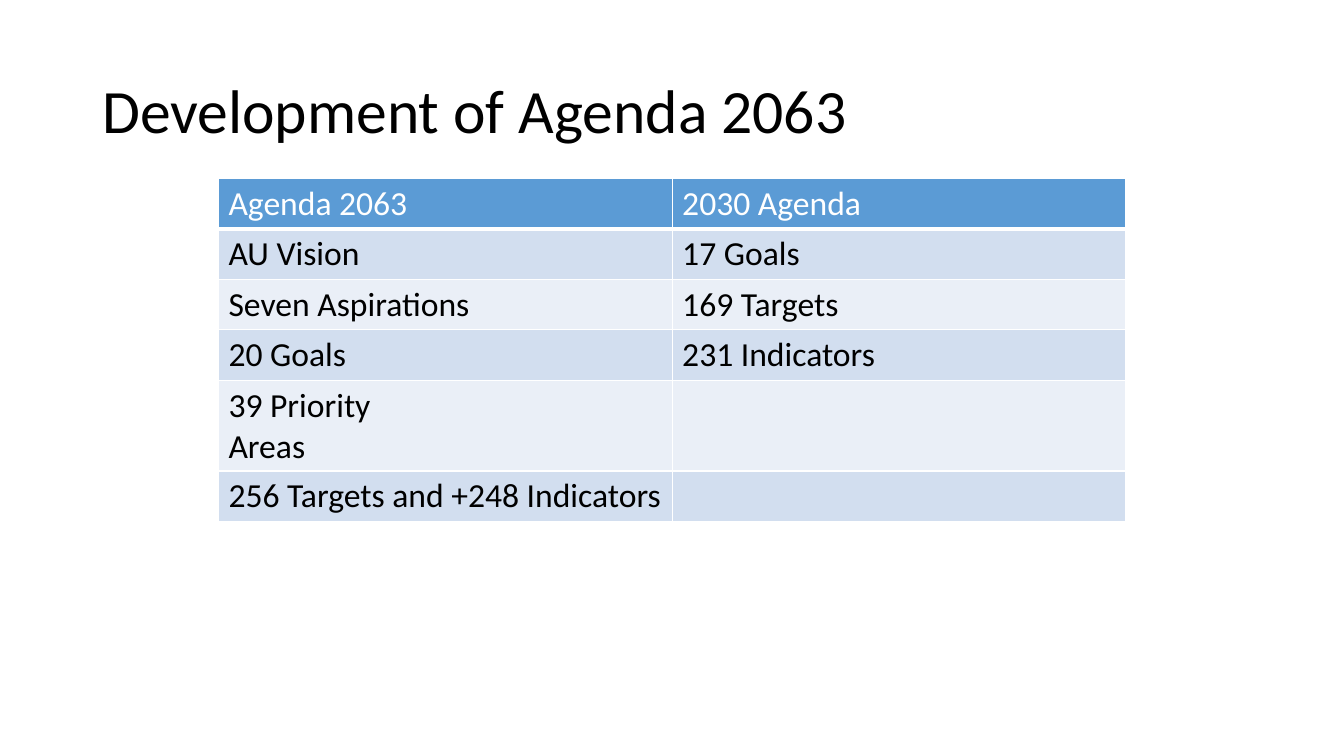
from lxml.etree import SubElement
from pptx import Presentation
from pptx.dml.color import RGBColor
from pptx.enum.text import MSO_ANCHOR
from pptx.oxml.ns import qn
from pptx.util import Inches, Pt

BLACK = RGBColor(0x00, 0x00, 0x00)
WHITE = RGBColor(0xFF, 0xFF, 0xFF)
HEADER_BLUE = RGBColor(0x5B, 0x9B, 0xD5)
BAND_BLUE = RGBColor(0xD2, 0xDE, 0xEF)
BAND_PALE = RGBColor(0xEA, 0xEF, 0xF7)

AGENDAS = [
    ("Agenda 2063", "2030 Agenda"),
    ("AU Vision", "17 Goals"),
    ("Seven Aspirations", "169 Targets"),
    ("20 Goals", "231 Indicators"),
    ("39 Priority \vAreas", ""),
    ("256 Targets and +248 Indicators", ""),
]


class AgendaSlide:
    """Holds the style and slide; lengths are units of a 160 by 90 grid."""

    FONT = "Calibri"
    UNIT = Inches(1 / 12)

    def __init__(self, presentation):
        self.slide = presentation.slides.add_slide(presentation.slide_layouts[6])

    def place(self, *grid_lengths):
        return [round(length * self.UNIT) for length in grid_lengths]

    def style(self, paragraph, size, color):
        for run in paragraph.runs:
            run.font.name = self.FONT
            run.font.size = Pt(size)
            run.font.bold = False
            run.font.color.rgb = color

    def title(self, wording, *box):
        frame = self.slide.shapes.add_textbox(*self.place(*box)).text_frame
        frame.word_wrap = True
        frame.vertical_anchor = MSO_ANCHOR.MIDDLE
        frame.text = wording
        frame.paragraphs[0].line_spacing = 0.9
        self.style(frame.paragraphs[0], 44, BLACK)

    def border(self, cell, side, width):
        line = SubElement(cell._tc.get_or_add_tcPr(), qn(f"a:ln{side}"), w=str(Pt(width)))
        fill = SubElement(line, qn("a:solidFill"))
        SubElement(fill, qn("a:srgbClr"), val=str(WHITE))

    def table(self, entries, left, top, width, row_height):
        box = self.place(left, top, width, row_height * len(entries))
        table = self.slide.shapes.add_table(len(entries), len(entries[0]), *box).table
        for row, wordings in enumerate(entries):
            is_header = row == 0
            band = HEADER_BLUE if is_header else (BAND_PALE, BAND_BLUE)[row % 2]
            for column, wording in enumerate(wordings):
                cell = table.cell(row, column)
                for side in "LRTB":
                    heavy = (row, side) in ((0, "B"), (1, "T"))
                    self.border(cell, side, 3 if heavy else 1)
                cell.fill.solid()
                cell.fill.fore_color.rgb = band
                if wording:
                    cell.text_frame.text = wording
                    self.style(cell.text_frame.paragraphs[0], 24,
                               WHITE if is_header else BLACK)


def main():
    presentation = Presentation()
    presentation.slide_width = Inches(13.33)
    presentation.slide_height = Inches(7.5)
    agenda = AgendaSlide(presentation)
    agenda.title("Development of Agenda 2063", 11, 4.8, 138, 17.4)
    agenda.table(AGENDAS, 26, 21.25, 108, 4.9)
    presentation.save("out.pptx")


if __name__ == "__main__":
    main()
